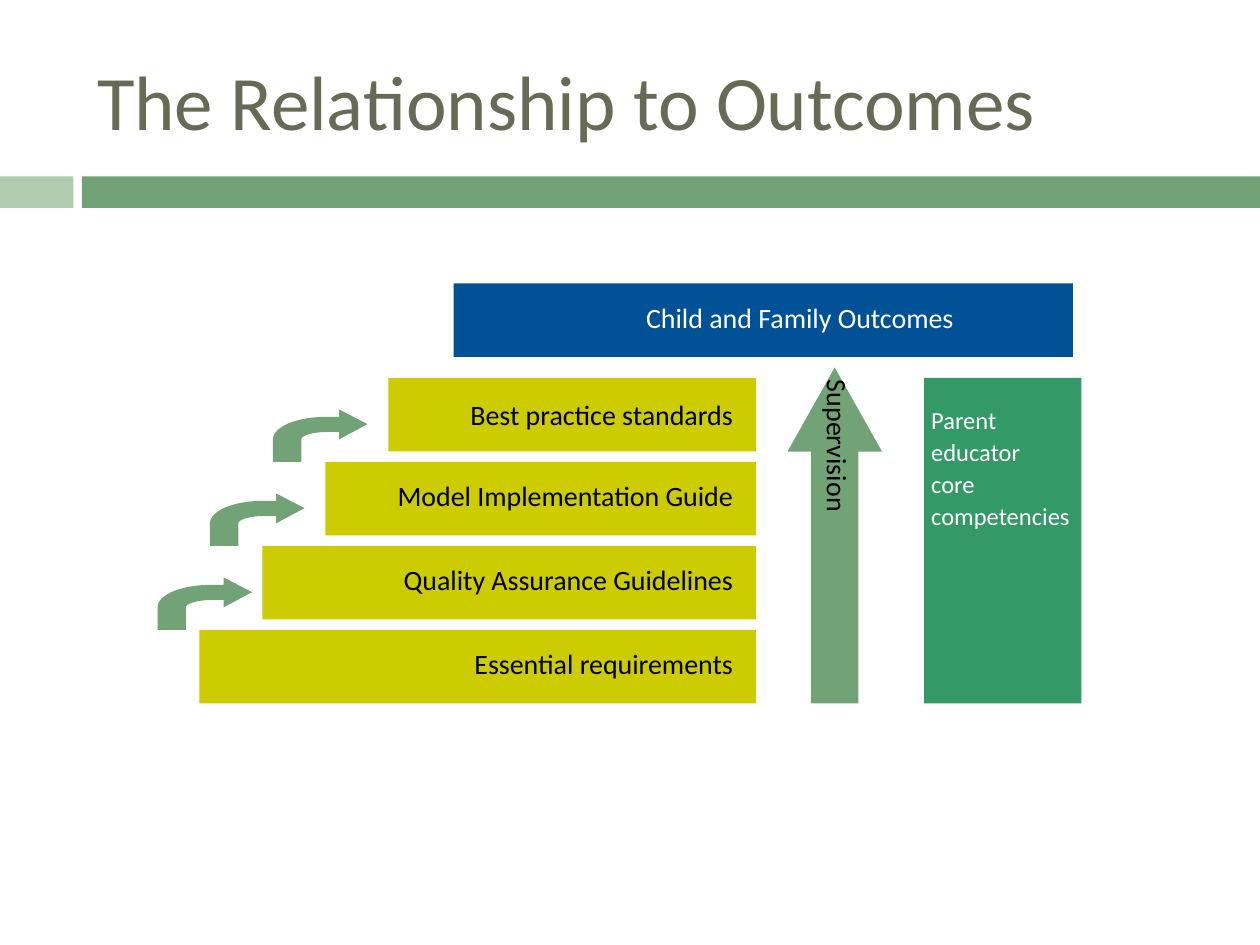
from typing import NamedTuple

from pptx import Presentation
from pptx.dml.color import RGBColor
from pptx.enum.shapes import MSO_SHAPE
from pptx.enum.text import MSO_ANCHOR, PP_ALIGN
from pptx.util import Inches, Pt

BLACK = RGBColor(0x00, 0x00, 0x00)
WHITE = RGBColor(0xFF, 0xFF, 0xFF)
OLIVE_GRAY = RGBColor(0x67, 0x6A, 0x55)
SAGE = RGBColor(0x72, 0xA3, 0x76)
PALE_SAGE = RGBColor(0xB0, 0xCC, 0xB0)
LIME = RGBColor(0xCC, 0xCC, 0x00)
GREEN = RGBColor(0x33, 0x99, 0x66)
BLUE = RGBColor(0x00, 0x51, 0x95)

UNITS_PER_INCH = 12  # grid of twelfths of an inch
FONT = "Calibri"
LABEL_HEIGHT = 4.4


class Area(NamedTuple):
    """A place on the grid, in grid units."""
    left: float
    top: float
    width: float
    height: float


class Step(NamedTuple):
    text: str
    arrow_left: float | None  # arrow that leads up to this step
    label_drop: float = 1


STEPS = [  # from the bottom up
    Step("Essential requirements", None),
    Step("Quality Assurance Guidelines", 15),
    Step("Model Implementation Guide", 20),
    Step("Best practice standards", 26, 1.3),
]
STEP_RIGHT, STEP_HEIGHT, STEP_PITCH, STEP_INDENT = 72, 7, 8, 6
BOTTOM_STEP_LEFT, BOTTOM_STEP_TOP = 19, 60


def grid(units: float) -> int:
    return Inches(units / UNITS_PER_INCH)


def paint(shape, color: RGBColor):
    shape.shadow.inherit = False
    shape.fill.solid()
    shape.fill.fore_color.rgb = color
    shape.line.fill.background()
    return shape


def add_block(slide, area: Area, color: RGBColor, kind=MSO_SHAPE.RECTANGLE):
    return paint(slide.shapes.add_shape(kind, *map(grid, area)), color)


def format_font(font, size: float, color: RGBColor) -> None:
    for name, value in {"name": FONT, "size": Pt(size), "bold": False}.items():
        setattr(font, name, value)
    font.color.rgb = color


def add_label(slide, area: Area, lines: list[str], color: RGBColor = BLACK,
              size: float = 16, align=PP_ALIGN.RIGHT):
    label = slide.shapes.add_textbox(*map(grid, area))
    frame = label.text_frame
    frame.word_wrap = True
    for number, line in enumerate(lines):
        paragraph = frame.paragraphs[0] if number == 0 else frame.add_paragraph()
        paragraph.text = line
        paragraph.alignment = align
        if number:
            paragraph.space_before = Pt(size / 10)
        format_font(paragraph.font, size, color)
    return label


def bezier(points: list[tuple[float, float]], pieces: int = 12):
    """Points along a cubic curve, both ends included."""
    for piece in range(pieces + 1):
        t = piece / pieces
        weights = ((1 - t) ** 3, 3 * t * (1 - t) ** 2, 3 * t * t * (1 - t), t ** 3)
        yield tuple(sum(w * p[axis] for w, p in zip(weights, points)) for axis in (0, 1))


def add_bent_arrow(slide, area: Area) -> None:
    # Outline as shares of the arrow's width and height
    outer = bezier([(0.57, 0.14), (0.25, 0.14), (0, 0.33), (0, 0.57)])
    inner = bezier([(0.3, 0.57), (0.3, 0.5), (0.42, 0.43), (0.57, 0.43)])
    outline = [(1, 0.28), (0.7, 0), (0.7, 0.14), *outer, (0, 1), (0.3, 1),
               *inner, (0.7, 0.43), (0.7, 0.57)]
    corners = [(grid(area.left + x * area.width), grid(area.top + y * area.height))
               for x, y in outline]
    builder = slide.shapes.build_freeform(*corners[0])
    builder.add_line_segments(corners[1:], close=True)
    paint(builder.convert_to_shape(), SAGE)


def add_step(slide, level: int, step: Step) -> None:
    left = BOTTOM_STEP_LEFT + level * STEP_INDENT
    top = BOTTOM_STEP_TOP - level * STEP_PITCH
    add_block(slide, Area(left, top, STEP_RIGHT - left, STEP_HEIGHT), LIME)
    add_label(slide, Area(35, top + step.label_drop, 36, LABEL_HEIGHT), [step.text])
    if step.arrow_left is not None:
        add_bent_arrow(slide, Area(step.arrow_left, top + 3, 9, 5))


def main() -> None:
    deck = Presentation()
    deck.slide_width, deck.slide_height = Inches(10), Inches(7.5)
    slide = deck.slides.add_slide(deck.slide_layouts[5])

    # Title and the band under it
    title = slide.shapes.title
    title_place = {"left": 0.67, "top": 0.25, "width": 8.92, "height": 1.08}
    for side, inches in title_place.items():
        setattr(title, side, Inches(inches))
    title.text_frame.text = "The Relationship to Outcomes"
    title.text_frame.vertical_anchor = MSO_ANCHOR.MIDDLE
    heading = title.text_frame.paragraphs[0]
    heading.alignment = PP_ALIGN.LEFT
    format_font(heading.font, 44, OLIVE_GRAY)
    add_block(slide, Area(0, 16.8, 7, 3), PALE_SAGE)
    add_block(slide, Area(7.8, 16.8, 112.2, 3), SAGE)

    # Staircase of standards
    for level, step in enumerate(STEPS):
        add_step(slide, level, step)

    # Supervision arrow
    supervision = add_block(slide, Area(75, 35, 9, 32), SAGE, MSO_SHAPE.UP_ARROW)
    supervision.adjustments[0] = 0.5
    supervision.adjustments[1] = 0.89
    supervision_label = add_label(slide, Area(61.8, 50.8, 36, LABEL_HEIGHT),
                                  ["Supervision"], align=PP_ALIGN.LEFT)
    supervision_label.rotation = 90

    # Core competencies
    add_block(slide, Area(88, 36, 15, 31), GREEN)
    add_label(slide, Area(87.5, 38, 17, 13.2),
              ["Parent", "educator", "core", "competencies"],
              WHITE, 14, PP_ALIGN.LEFT)

    # Outcomes on top
    add_block(slide, Area(43.2, 27, 59, STEP_HEIGHT), BLUE)
    add_label(slide, Area(52, 28, 40, LABEL_HEIGHT), ["Child and Family Outcomes"], WHITE)

    deck.save("out.pptx")


if __name__ == "__main__":
    main()
